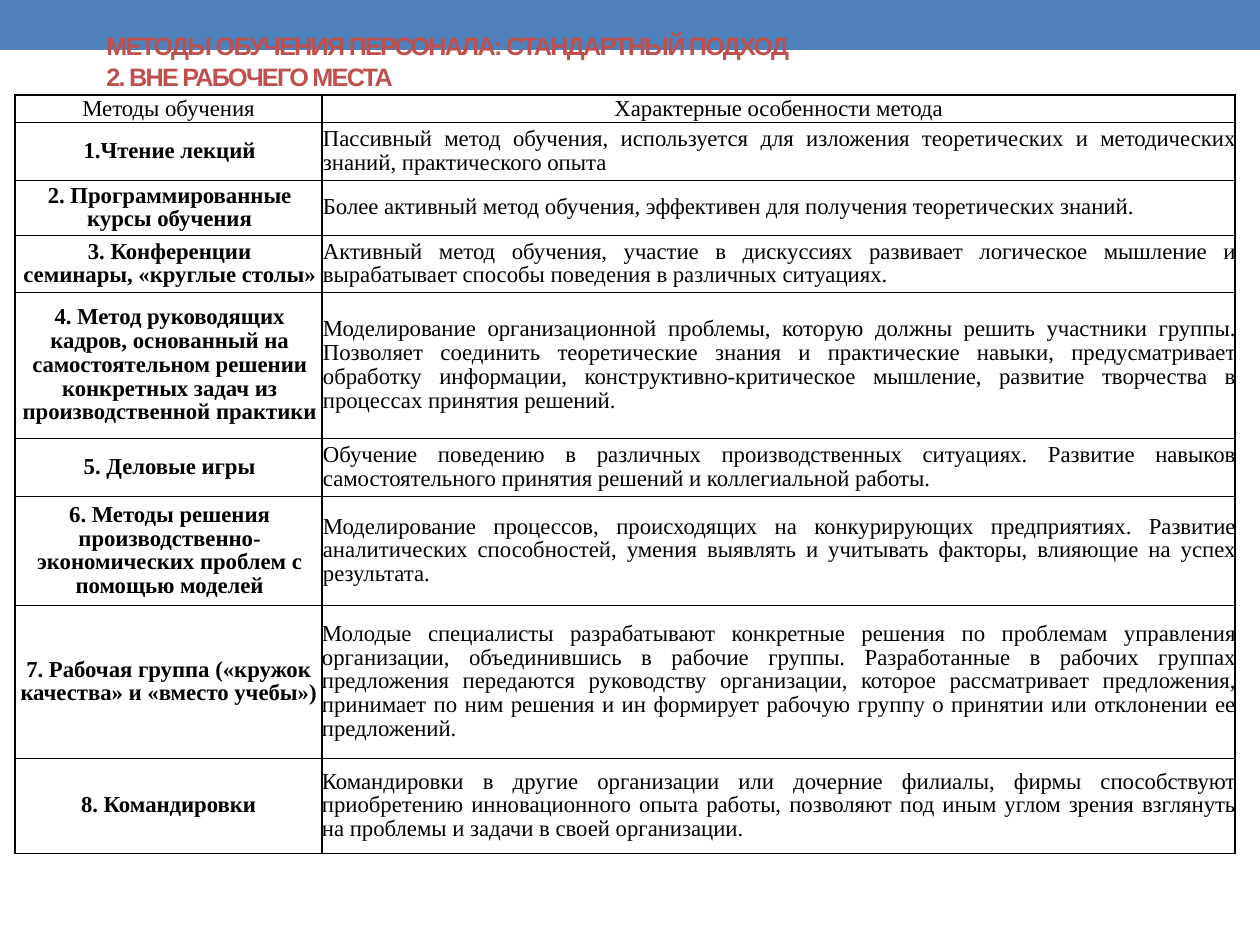
from dataclasses import dataclass
from typing import Any

from lxml import etree
from pptx import Presentation
from pptx.dml.color import RGBColor
from pptx.enum.shapes import MSO_SHAPE
from pptx.enum.text import MSO_ANCHOR, PP_ALIGN
from pptx.oxml.ns import qn
from pptx.util import Emu, Pt

PX = 914400 // 126
RECTANGLE = MSO_SHAPE.RECTANGLE
MIDDLE = MSO_ANCHOR.MIDDLE
LEFT, CENTER, JUSTIFY = PP_ALIGN.LEFT, PP_ALIGN.CENTER, PP_ALIGN.JUSTIFY
COLORS = {"band": "4F81BD", "title": "C0504D", "ink": "000000", "paper": "FFFFFF"}

TITLE = "МЕТОДЫ ОБУЧЕНИЯ ПЕРСОНАЛА: СТАНДАРТНЫЙ ПОДХОД\v2. ВНЕ РАБОЧЕГО МЕСТА"
COLUMN_WIDTHS = [307, 913]
HEADINGS = ("Методы обучения", "Характерные особенности метода")
HEADING_HEIGHT = 27
METHODS = [
    (58, 1, "1.Чтение лекций",
     "Пассивный метод обучения, используется для изложения теоретических и "
     "методических знаний, практического опыта"),
    (55, 1, "2. Программированные курсы обучения",
     "Более активный метод обучения, эффективен для получения теоретических знаний."),
    (57, 1, "3. Конференции\nсеминары, «круглые столы»",
     "Активный метод обучения, участие в дискуссиях развивает логическое мышление "
     "и вырабатывает способы поведения в различных ситуациях."),
    (146, 1, "4. Метод руководящих кадров, основанный на самостоятельном решении "
     "конкретных задач из производственной практики",
     "Моделирование организационной проблемы, которую должны решить участники "
     "группы. Позволяет соединить теоретические знания и практические навыки, "
     "предусматривает обработку информации, конструктивно-критическое мышление, "
     "развитие творчества в процессах принятия решений."),
    (58, 1, "5. Деловые игры",
     "Обучение поведению в различных производственных ситуациях. Развитие навыков "
     "самостоятельного принятия решений и коллегиальной работы."),
    (109, 1, "6. Методы решения производственно-экономических проблем с помощью моделей",
     "Моделирование процессов, происходящих на конкурирующих предприятиях. "
     "Развитие аналитических способностей, умения выявлять и учитывать факторы, "
     "влияющие на успех результата."),
    (153, 0, "7. Рабочая группа («кружок качества» и «вместо учебы»)",
     "Молодые специалисты разрабатывают конкретные решения по проблемам управления "
     "организации, объединившись в рабочие группы. Разработанные в рабочих группах "
     "предложения передаются руководству организации, которое рассматривает "
     "предложения, принимает по ним решения и ин формирует рабочую группу о "
     "принятии или отклонении ее предложений."),
    (95, 0, "8. Командировки",
     "Командировки в другие организации или дочерние филиалы, фирмы способствуют "
     "приобретению инновационного опыта работы, позволяют под иным углом зрения "
     "взглянуть на проблемы и задачи в своей организации."),
]


@dataclass
class SlideBuilder:
    """Draws styled elements on the current slide."""

    page: Any
    title_font: str = "Arial"
    title_size: float = 14.4
    table_font: str = "Times New Roman"
    table_size: float = 13
    line_spacing: float = 0.95

    def place(self, *lengths):
        return [Emu(length * PX) for length in lengths]

    def set_font(self, paragraph, name, size, color, bold):
        font = paragraph.font
        font.name, font.size, font.bold = name, Pt(size), bold
        font.color.rgb = RGBColor.from_string(COLORS[color])

    def band(self, left, top, width, height):
        shape = self.page.shapes.add_shape(RECTANGLE, *self.place(left, top, width, height))
        shape.shadow.inherit = False
        shape.fill.solid()
        shape.fill.fore_color.rgb = RGBColor.from_string(COLORS["band"])
        shape.line.fill.background()

    def title(self, text, left, top, width, height):
        box = self.page.shapes.add_textbox(*self.place(left, top, width, height))
        frame = box.text_frame
        frame.word_wrap = True
        frame.vertical_anchor = MIDDLE
        frame.text = text
        paragraph = frame.paragraphs[0]
        paragraph.alignment = LEFT
        self.set_font(paragraph, self.title_font, self.title_size, "title", True)
        for span in paragraph.runs:
            span.font._element.set("spc", "-100")

    def table(self, left, top, widths, heights):
        frame = self.page.shapes.add_table(
            len(heights), len(widths), *self.place(left, top, sum(widths), sum(heights)))
        table = frame.table
        for column, width in zip(table.columns, widths):
            column.width = Emu(width * PX)
        for row, height in zip(table.rows, heights):
            row.height = Emu(height * PX)
        return table

    def cell(self, cell, text, alignment, bold=False, indent=0, spacing=1.0):
        cell.margin_left = cell.margin_right = cell.margin_top = cell.margin_bottom = 0
        cell.vertical_anchor = MIDDLE
        cell.text = text
        for paragraph in cell.text_frame.paragraphs:
            paragraph.alignment = alignment
            paragraph.line_spacing = spacing
            paragraph._p.get_or_add_pPr().set("marL", str(indent * PX))
            self.set_font(paragraph, self.table_font, self.table_size, "ink", bold)
        self.borders(cell)
        cell.fill.solid()
        cell.fill.fore_color.rgb = RGBColor.from_string(COLORS["paper"])

    def borders(self, cell):
        properties = cell._tc.get_or_add_tcPr()
        for side in ("lnL", "lnR", "lnT", "lnB"):
            line = etree.SubElement(properties, qn(f"a:{side}"), w=str(Pt(1)))
            fill = etree.SubElement(line, qn("a:solidFill"))
            etree.SubElement(fill, qn("a:srgbClr"), val=COLORS["ink"])


def main():
    deck = Presentation()
    deck.slide_width, deck.slide_height = Emu(1260 * PX), Emu(945 * PX)
    builder = SlideBuilder(deck.slides.add_slide(deck.slide_layouts[6]))
    builder.band(0, 0, 1260, 50)
    builder.title(TITLE, 94, 26, 1071, 70)
    heights = [HEADING_HEIGHT] + [method[0] for method in METHODS]
    table = builder.table(15, 95, COLUMN_WIDTHS, heights)
    for column, heading in enumerate(HEADINGS):
        builder.cell(table.cell(0, column), heading, CENTER)
    for row, (_, indent, name, features) in enumerate(METHODS, start=1):
        builder.cell(table.cell(row, 0), name, CENTER, True, 2 * indent, builder.line_spacing)
        builder.cell(table.cell(row, 1), features, JUSTIFY, False, indent, builder.line_spacing)
    deck.save("out.pptx")


if __name__ == "__main__":
    main()
